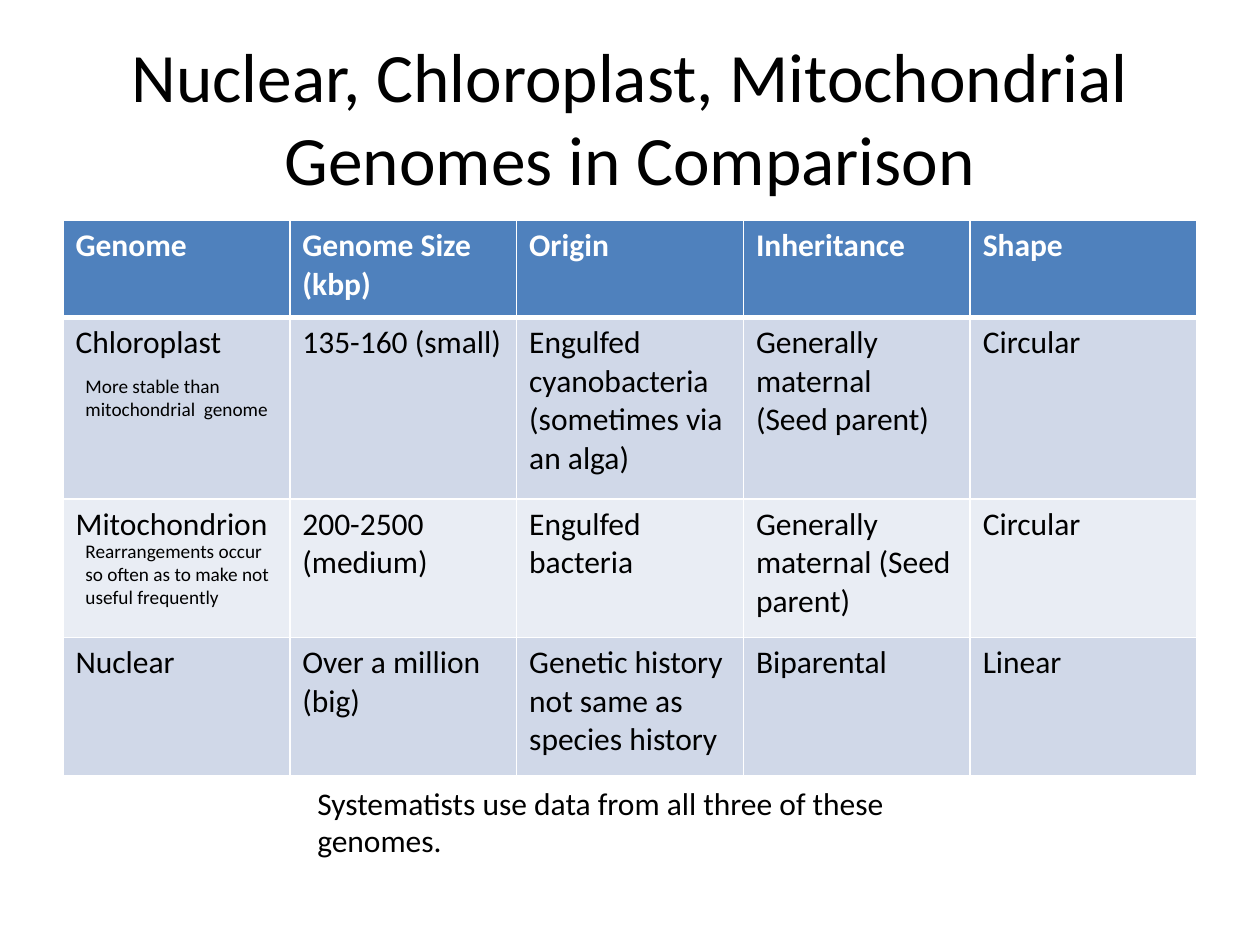
from dataclasses import dataclass

from lxml.etree import SubElement
from pptx import Presentation
from pptx.dml.color import RGBColor as Rgb
from pptx.enum.text import MSO_ANCHOR as Anchor, MSO_AUTO_SIZE as AutoSize, PP_ALIGN as Align
from pptx.oxml.ns import qn
from pptx.util import Inches, Pt


@dataclass(frozen=True)
class Theme:
    """Colours, font and type sizes of the slide."""
    font: str = "Calibri"
    ink: str = "000000"
    paper: str = "FFFFFF"
    header: str = "4F81BD"
    bands: tuple = ("D0D8E8", "E9EDF4")
    title: float = 39.6
    body: float = 18
    note: float = 11
    rule: float = 1
    header_rule: float = 3


THEME = Theme()
WIDTH, HEIGHT = Inches(10), Inches(7.5)
TITLE = "Nuclear, Chloroplast, Mitochondrial Genomes in Comparison"
GENOMES = [
    ["Genome", "Genome Size (kbp)", "Origin", "Inheritance", "Shape"],
    ["Chloroplast", "135-160 (small)", "Engulfed cyanobacteria (sometimes via an alga)",
     "Generally maternal\v(Seed parent)", "Circular"],
    ["Mitochondrion", "200-2500 (medium)", "Engulfed bacteria",
     "Generally maternal (Seed parent)", "Circular"],
    ["Nuclear", "Over a million (big)", "Genetic history not same as species history",
     "Biparental", "Linear"],
]
ROW_SHARES = [10.27, 19.2, 14.67, 14.67]
TABLE_AREA = (5, 23.33, 90, sum(ROW_SHARES))
NOTES = [
    ("Systematists use data from all three of these genomes.", THEME.body, (24.2, 82.27, 56.7, 9.47)),
    ("Rearrangements occur so often as to make not useful frequently", THEME.note, (5.8, 56.4, 16.7, 8.8)),
    ("More stable than mitochondrial  genome", THEME.note, (5.8, 38.93, 16.7, 6.27)),
]


def across(share):
    """Return a percentage of the slide's width."""
    return round(WIDTH * share / 100)


def down(share):
    """Return a percentage of the slide's height."""
    return round(HEIGHT * share / 100)


def area(left, top, width, height):
    """Turn percentages of the slide into lengths."""
    return across(left), down(top), across(width), down(height)


def apply(target, **values):
    """Set each given attribute on the target."""
    for key, value in values.items():
        setattr(target, key, value)


def write(frame, words, size, colour=THEME.ink, bold=False):
    """Fill a text frame with one formatted paragraph."""
    frame.text = words
    paragraph = frame.paragraphs[0]
    for run in paragraph.runs:
        apply(run.font, name=THEME.font, size=Pt(size), bold=bold)
        run.font.color.rgb = Rgb.from_string(colour)
    return paragraph


def add_title(slide):
    """Place the centred slide title."""
    heading = slide.shapes.title
    left, top, width, height = area(5, 4, 90, 16.67)
    apply(heading, left=left, top=top, width=width, height=height)
    apply(heading.text_frame, word_wrap=True, auto_size=AutoSize.NONE, vertical_anchor=Anchor.MIDDLE)
    write(heading.text_frame, TITLE, THEME.title).alignment = Align.CENTER


def rule_cell(cell, bottom, top):
    """Draw the four white borders of a cell ahead of its fill."""
    properties = cell._tc.get_or_add_tcPr()
    for side, weight in (("lnL", THEME.rule), ("lnR", THEME.rule), ("lnT", top), ("lnB", bottom)):
        border = SubElement(properties, qn(f"a:{side}"), w=str(Pt(weight)))
        paint = SubElement(border, qn("a:solidFill"))
        SubElement(paint, qn("a:srgbClr"), val=THEME.paper)


def style_cell(cell, words, row):
    """Write and colour a cell according to its row."""
    is_header = row == 0
    write(cell.text_frame, words, THEME.body, THEME.paper if is_header else THEME.ink, is_header)
    rule_cell(cell, bottom=THEME.header_rule if is_header else THEME.rule,
              top=THEME.header_rule if row == 1 else THEME.rule)
    cell.fill.solid()
    cell.fill.fore_color.rgb = Rgb.from_string(THEME.header if is_header else THEME.bands[(row - 1) % 2])


def add_genome_table(slide):
    """Add the table that compares the three genomes."""
    table = slide.shapes.add_table(len(GENOMES), len(GENOMES[0]), *area(*TABLE_AREA)).table
    for row, (genome, share) in enumerate(zip(GENOMES, ROW_SHARES)):
        table.rows[row].height = down(share)
        for column, words in enumerate(genome):
            style_cell(table.cell(row, column), words, row)


def add_note(slide, words, size, place):
    """Add a wrapped text box that fits its words."""
    frame = slide.shapes.add_textbox(*area(*place)).text_frame
    apply(frame, word_wrap=True, auto_size=AutoSize.SHAPE_TO_FIT_TEXT)
    write(frame, words, size)


def main():
    """Build and save the genome comparison slide."""
    deck = Presentation()
    apply(deck, slide_width=WIDTH, slide_height=HEIGHT)
    slide = deck.slides.add_slide(deck.slide_layouts.get_by_name("Title Only"))
    add_title(slide)
    add_genome_table(slide)
    for note in NOTES:
        add_note(slide, *note)
    deck.save("out.pptx")


if __name__ == "__main__":
    main()
